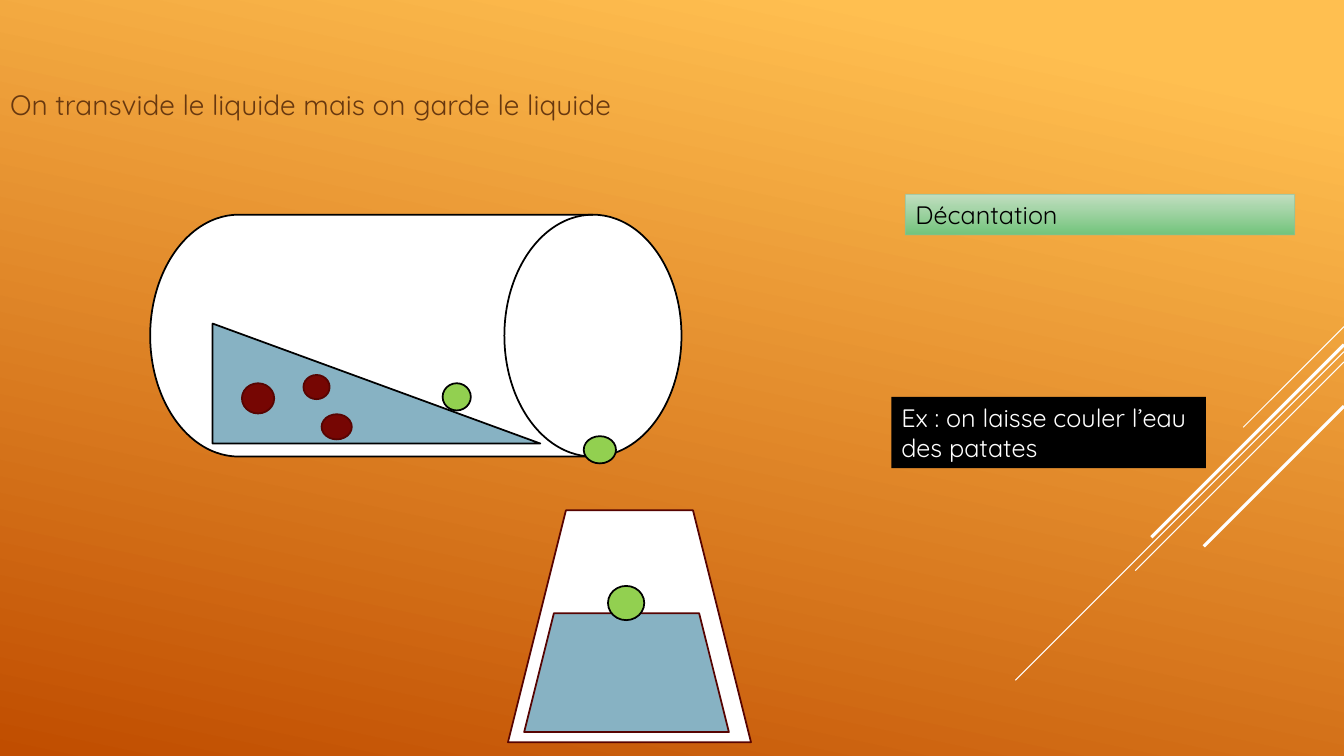
from lxml import etree
from pptx import Presentation
from pptx import util as u
from pptx.dml.color import RGBColor
from pptx.enum import shapes, text
from pptx.oxml.ns import qn

SLIDE_W, SLIDE_H = u.Inches(13.33), u.Inches(7.5)
FONT = "Quicksand"
FORM = shapes.MSO_SHAPE
COLORS = {
    "sky": "FFBF50", "ember": "C04D00", "white": "FFFFFF", "black": "000000",
    "brown": "68380F", "water": "87B2C3", "solid": "760603", "maroon": "570402",
    "drop": "92D050", "mint": "C2DEC1", "leaf": "72C47B", "sage": "94BD94",
}

# Boxes are left, top, width, height in percent of the slide.
SOLIDS = [(18, 50.7, 2.4, 4), (23.93, 54.8, 2.25, 3.33), (22.58, 49.6, 1.95, 3.2)]
FALLING_DROPS = [(32.93, 50.7, 2.1, 3.6), (43.43, 57.7, 2.4, 3.6)]
FLASK_DROP = (45.24, 77.5, 2.7, 4.53)
# Start height and horizontal run in percent, then weight in points.
RAYS = [(43.2, 7.5, 0.75), (46.53, 24.45, 0.75), (47.87, 15.53, 0.75),
        (45.6, 14.33, 2.25), (53.73, 10.43, 2.25)]


def color(name):
    return RGBColor.from_string(COLORS[name])


def across(share):
    return round(SLIDE_W * share / 100)


def down(share):
    return round(SLIDE_H * share / 100)


def place(box):
    left, top, width, height = box
    return across(left), down(top), across(width), down(height)


def fill_gradient(fill, start, end, angle, first=0):
    """Blend two colours; the angle runs clockwise from the left-to-right direction."""
    fill.gradient()
    fill.gradient_angle = 360 - angle
    for stop, name, position in zip(fill.gradient_stops, (start, end), (first, 1)):
        stop.color.rgb = color(name)
        stop.position = position


def draw(slide, form, box, fill, line=None, weight=1.25):
    shape = slide.shapes.add_shape(form, *place(box))
    shape.shadow.inherit = False
    shape.fill.solid()
    shape.fill.fore_color.rgb = color(fill)
    if line:
        shape.line.color.rgb = color(line)
        shape.line.width = u.Pt(weight)
    else:
        shape.line.fill.background()
    return shape


def write(shape, words, size=18, ink="black", after=0):
    frame = shape.text_frame
    frame.word_wrap = True
    frame.vertical_anchor = text.MSO_ANCHOR.MIDDLE
    paragraph = frame.paragraphs[0]
    paragraph.alignment = text.PP_ALIGN.LEFT
    paragraph.space_after = u.Pt(after)
    run = paragraph.add_run()
    run.text = words
    run.font.name = FONT
    run.font.size = u.Pt(size)
    run.font.color.rgb = color(ink)


def draw_ray(slide, top, run, weight):
    """Draw a 45 degree line falling from the right edge."""
    reach = across(run)
    ray = slide.shapes.add_connector(
        shapes.MSO_CONNECTOR.STRAIGHT,
        SLIDE_W, down(top), SLIDE_W - reach, down(top) + reach)
    ray.line.color.rgb = color("white")
    ray.line.width = u.Pt(weight)
    etree.SubElement(ray.line._get_or_add_ln().getparent(), qn("a:effectLst"))


def draw_drum(slide):
    draw(slide, FORM.FLOWCHART_DIRECT_ACCESS_STORAGE, (11.18, 28.4, 39.53, 32),
         "white", "black")
    draw(slide, FORM.RIGHT_TRIANGLE, (15.82, 42.8, 24.38, 15.87), "water", "black")
    for box in SOLIDS:
        draw(slide, FORM.FLOWCHART_CONNECTOR, box, "solid", "maroon")
    for box in FALLING_DROPS:
        draw(slide, FORM.FLOWCHART_CONNECTOR, box, "drop", "black")


def draw_flask(slide):
    draw(slide, FORM.TRAPEZOID, (37.8, 67.5, 18.08, 30.67), "white", "maroon")
    draw(slide, FORM.TRAPEZOID, (39, 81.1, 15.23, 15.73), "water", "maroon")
    draw(slide, FORM.FLOWCHART_CONNECTOR, FLASK_DROP, "drop", "black")


def add_labels(slide):
    method = draw(slide, FORM.RECTANGLE, (67.37, 25.7, 28.96, 5.38),
                  "mint", "sage", 0.75)
    fill_gradient(method.fill, "mint", "leaf", 90)
    edge = method.line.fill._xPr.find(qn("a:solidFill"))[0]
    etree.SubElement(edge, qn("a:alpha"), val="60000")
    write(method, "Décantation")
    example = draw(slide, FORM.RECTANGLE, (66.32, 52.5, 23.4, 9.42), "black")
    write(example, "Ex : on laisse couler l’eau des patates", ink="white")


def main():
    deck = Presentation()
    deck.slide_width, deck.slide_height = SLIDE_W, SLIDE_H
    slide = deck.slides.add_slide(deck.slide_layouts[2])
    fill_gradient(slide.background.fill, "sky", "ember", 102, first=0.1)

    title, statement = slide.placeholders
    title.element.getparent().remove(title.element)
    statement.left, statement.top, statement.width, statement.height = place(
        (0, 0, 70.07, 27.47))
    write(statement, "On transvide le liquide mais on garde le liquide",
          size=20, ink="brown", after=6)

    for ray in RAYS:
        draw_ray(slide, *ray)
    draw_drum(slide)
    draw_flask(slide)
    add_labels(slide)
    deck.save("out.pptx")


if __name__ == "__main__":
    main()
